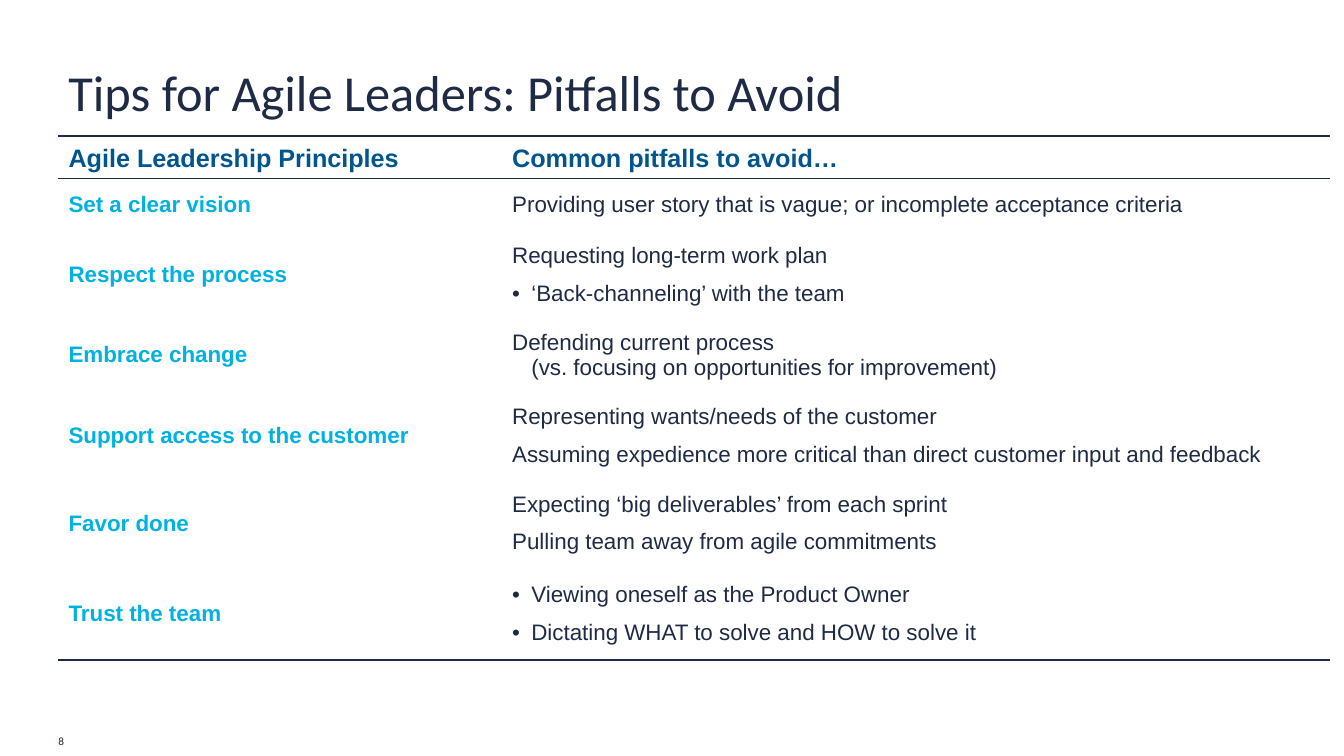
from copy import deepcopy

from lxml import etree
from pptx import Presentation
from pptx import util as u
from pptx.dml.color import RGBColor
from pptx.enum import text
from pptx.oxml import ns

NAVY, BLUE, CYAN = "1F2A44", "00558C", "00B1E2"
ANCHOR = text.MSO_ANCHOR
HANG = u.Inches(0.19)
HEADS = ["Agile Leadership Principles", "Common pitfalls to avoid…"]
# Row height, principle, pitfalls; a leading "•" marks a bulleted pitfall.
ROWS = [
    (0.52, "Set a clear vision",
     ["Providing user story that is vague; or incomplete acceptance criteria"]),
    (0.87, "Respect the process",
     ["Requesting long-term work plan", "•‘Back-channeling’ with the team"]),
    (0.73, "Embrace change",
     ["Defending current process\v(vs. focusing on opportunities for improvement)"]),
    (0.87, "Support access to the customer",
     ["Representing wants/needs of the customer",
      "Assuming expedience more critical than direct customer input and feedback"]),
    (0.87, "Favor done",
     ["Expecting ‘big deliverables’ from each sprint",
      "Pulling team away from agile commitments"]),
    (0.92, "Trust the team",
     ["•Viewing oneself as the Product Owner",
      "•Dictating WHAT to solve and HOW to solve it"]),
]


def color(code):
    return RGBColor.from_string(code)


def style(par, tint, **look):
    """Format each run of a paragraph, and its line breaks alike."""
    for run in par.runs:
        for key, val in look.items():
            setattr(run.font, key, val)
        run.font.color.rgb = color(tint)
    for stop in par._p.findall(ns.qn("a:br")):
        stop.append(deepcopy(par.runs[0].font._element))


def label(slide, box, words, size, **frame):
    area = slide.shapes.add_textbox(*map(u.Inches, box)).text_frame
    area.word_wrap = True
    for key, val in frame.items():
        setattr(area, key, val)
    area.text = words
    style(area.paragraphs[0], NAVY, size=u.Pt(size), name="Calibri")


def rule(cell, side):
    """Draw a thin line on one side of a cell."""
    line = etree.SubElement(cell._tc.get_or_add_tcPr(), ns.qn("a:ln" + side), w="12700")
    fill = etree.SubElement(line, ns.qn("a:solidFill"))
    etree.SubElement(fill, ns.qn("a:srgbClr"), val=NAVY)


def write(cell, words, tint, size, bold, anchor=ANCHOR.MIDDLE, sides=""):
    for side in sides:
        rule(cell, side)
    cell.fill.background()
    cell.vertical_anchor = anchor
    cell.text_frame.text = "\n".join(words)
    for par in cell.text_frame.paragraphs:
        style(par, tint, size=u.Pt(size), bold=bold, name="Arial")


def hang(cell, words):
    """Indent the pitfalls of a cell and bullet those marked."""
    cell.margin_right = u.Inches(0.3)
    for i, (par, line) in enumerate(zip(cell.text_frame.paragraphs, words)):
        if i:
            par.space_before = u.Pt(9)
        props = par._p.get_or_add_pPr()
        props.set("marL", str(HANG))
        props.set("indent", str(-HANG))
        if line.startswith("•"):
            font = etree.SubElement(props, ns.qn("a:buFont"))
            font.set("typeface", "Arial")
            etree.SubElement(props, ns.qn("a:buChar")).set("char", "•")
        else:
            etree.SubElement(props, ns.qn("a:buNone"))


def pitfalls(slide, left, top, width):
    highs = [0.42] + [row[0] for row in ROWS]
    box = map(u.Inches, (left, top, width, sum(highs)))
    grid = slide.shapes.add_table(len(highs), 2, *box).table
    grid.first_row = grid.horz_banding = False
    plain = "{2D5ABB26-0587-4C30-8999-92F81FD0307C}"
    grid._tbl.tblPr.find(ns.qn("a:tableStyleId")).text = plain
    for col, wide in zip(grid.columns, (4.4, width - 4.4)):
        col.width = u.Inches(wide)
    for row, high in zip(grid.rows, highs):
        row.height = u.Inches(high)
    for c, head in enumerate(HEADS):
        write(grid.cell(0, c), [head], BLUE, 18, True, ANCHOR.BOTTOM, "TB")
    for r, (_, name, items) in enumerate(ROWS, 1):
        sides = "B" if r == len(ROWS) else ""
        write(grid.cell(r, 0), [name], CYAN, 16, True, sides=sides)
        cell = grid.cell(r, 1)
        write(cell, [item.lstrip("•") for item in items], NAVY, 16, False, sides=sides)
        hang(cell, items)


def main():
    deck = Presentation()
    deck.slide_width, deck.slide_height = u.Inches(13.33), u.Inches(7.5)
    slide = deck.slides.add_slide(deck.slide_layouts[6])
    label(slide, (0.58, 7.23, 0.92, 0.24), "8", 8,
          margin_left=0, vertical_anchor=ANCHOR.MIDDLE)
    pitfalls(slide, 0.58, 1.35, 12.61)
    label(slide, (0.58, 0.56, 12.17, 0.87), "Tips for Agile Leaders: Pitfalls to Avoid", 36)
    deck.save("out.pptx")


if __name__ == "__main__":
    main()
